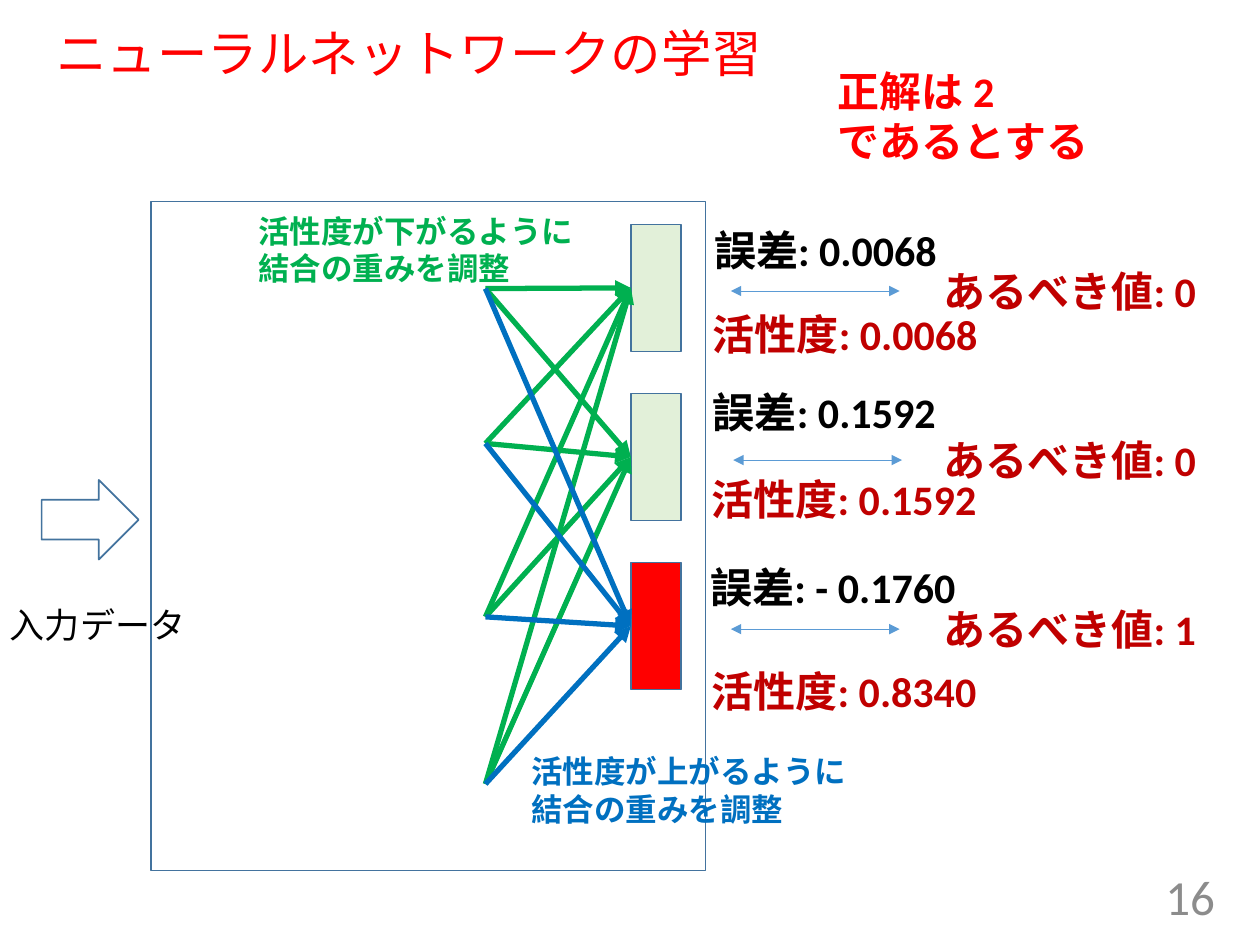
"""Builds the slide on adjusting the weights of a neural network."""
from lxml import etree
from pptx import Presentation
from pptx.dml.color import RGBColor
from pptx.enum import shapes, text
from pptx.oxml import ns
from pptx.util import Pt

RED, DARK_RED, BLACK, GREY = "FF0000", "C00000", "000000", "8C8C8C"
GREEN, BLUE, OUTLINE, THIN_BLUE = "00B050", "0070C0", "43739E", "5B9BD5"

LABELS = [
    (["ニューラルネットワークの学習"], (25.2, 13.7, 666, 36.7), 28.8, RED,
     dict(bold=False, middle=True, spacing=0.9)),
    (["正解は 2", "であるとする"], (471.6, 33.8, 176.4, 94.3), 24, RED, {}),
    (["入力データ"], (-1.4, 341.3, 115.2, 31.7), 20, BLACK, dict(bold=False, wrap=False)),
    (["活性度が下がるように", "結合の重みを調整"], (140.4, 117.4, 196.6, 51.1), 18, GREEN,
     dict(wrap=False)),
    (["活性度が上がるように", "結合の重みを調整"], (296.6, 426.2, 196.6, 51.1), 18, BLUE,
     dict(wrap=False)),
    (["16"], (539.3, 497.5, 162, 28.8), 28, GREY,
     dict(bold=False, middle=True, align=text.PP_ALIGN.RIGHT)),
]
OUTPUTS = [
    dict(fill="E2F0D9", link=GREEN, error="0.0068", error_at=(401, 124.6),
         activity="0.0068", activity_at=(400.3, 172.8), target="0", gap_left=417.6),
    dict(fill="E2F0D9", link=GREEN, error="0.1592", error_at=(400.3, 217.4),
         activity="0.1592", activity_at=(399.6, 267.1), target="0", gap_left=419),
    dict(fill=RED, link=BLUE, error="- 0.1760", error_at=(398.9, 317.5),
         activity="0.8340", activity_at=(399.6, 376.6), target="1", gap_left=417.6),
]
HIDDEN_X, HIDDEN_YS = 277.4, (164.9, 253.4, 352.5, 448)
CELL_LEFT, CELL_TOP, CELL_WIDTH, CELL_HEIGHT = 360.5, 128.2, 28.8, 72.7
ROW_PITCH, GAP_TOP, GAP_WIDTH, TARGET_TOP = 96.6, 166.3, 96.5, 148.3


def rgb(code):
    return RGBColor.from_string(code)


def add_label(slide, lines, place, size, color, bold=True, wrap=True, middle=False,
              align=text.PP_ALIGN.LEFT, spacing=None):
    label = slide.shapes.add_textbox(*map(Pt, place))
    frame = label.text_frame
    frame.word_wrap = wrap
    frame.vertical_anchor = text.MSO_ANCHOR.MIDDLE if middle else text.MSO_ANCHOR.TOP
    for i, line in enumerate(lines):
        paragraph = frame.add_paragraph() if i else frame.paragraphs[0]
        paragraph.alignment = align
        if spacing:
            paragraph.line_spacing = spacing
        run = paragraph.add_run()
        run.text = line
        run.font.name, run.font.size, run.font.bold = "Calibri", Pt(size), bold
        run.font.color.rgb = rgb(color)


def add_block(slide, kind, place, fill=None):
    block = slide.shapes.add_shape(kind, *map(Pt, place))
    block.shadow.inherit = False
    if fill:
        block.fill.solid()
        block.fill.fore_color.rgb = rgb(fill)
    else:
        block.fill.background()
    block.line.color.rgb = rgb(OUTLINE)
    block.line.width = Pt(1)
    return block


def add_arrow(slide, start, end, color, width, ends=("tailEnd",)):
    arrow = slide.shapes.add_connector(shapes.MSO_CONNECTOR.STRAIGHT, *map(Pt, start + end))
    arrow.line.color.rgb = rgb(color)
    arrow.line.width = Pt(width)
    properties = arrow.line._get_or_add_ln()
    for name in ends:
        etree.SubElement(properties, ns.qn("a:" + name), type="triangle")
    etree.SubElement(arrow._element.spPr, ns.qn("a:effectLst"))
    return arrow


def main():
    deck = Presentation()
    deck.slide_width, deck.slide_height = Pt(720), Pt(540)
    slide = deck.slides.add_slide(deck.slide_layouts[6])

    add_block(slide, shapes.MSO_SHAPE.RECTANGLE, (86.4, 115.2, 316.8, 382.3))
    add_block(slide, shapes.MSO_SHAPE.RIGHT_ARROW, (23.8, 274.3, 55.4, 45.4))

    for row, output in enumerate(OUTPUTS):
        shift = row * ROW_PITCH
        cell_top = CELL_TOP + shift
        cell = add_block(slide, shapes.MSO_SHAPE.RECTANGLE,
                         (CELL_LEFT, cell_top, CELL_WIDTH, CELL_HEIGHT), output["fill"])
        for hidden_y in HIDDEN_YS:
            link = add_arrow(slide, (HIDDEN_X, hidden_y),
                             (CELL_LEFT, cell_top + CELL_HEIGHT / 2), output["link"], 3)
            link.end_connect(cell, 1)

        gap_left, gap_y = output["gap_left"], GAP_TOP + shift
        add_arrow(slide, (gap_left, gap_y), (gap_left + GAP_WIDTH, gap_y), THIN_BLUE, 0.5,
                  ("headEnd", "tailEnd"))
        add_label(slide, ["誤差: " + output["error"]], output["error_at"] + (165, 36),
                  24, BLACK)
        add_label(slide, ["活性度: " + output["activity"]], output["activity_at"] + (200, 56),
                  24, DARK_RED)
        add_label(slide, ["あるべき値: " + output["target"]],
                  (532.1, TARGET_TOP + shift, 187.9, 36), 24, DARK_RED)

    for lines, place, size, color, options in LABELS:
        add_label(slide, lines, place, size, color, **options)

    deck.save("out.pptx")


if __name__ == "__main__":
    main()
